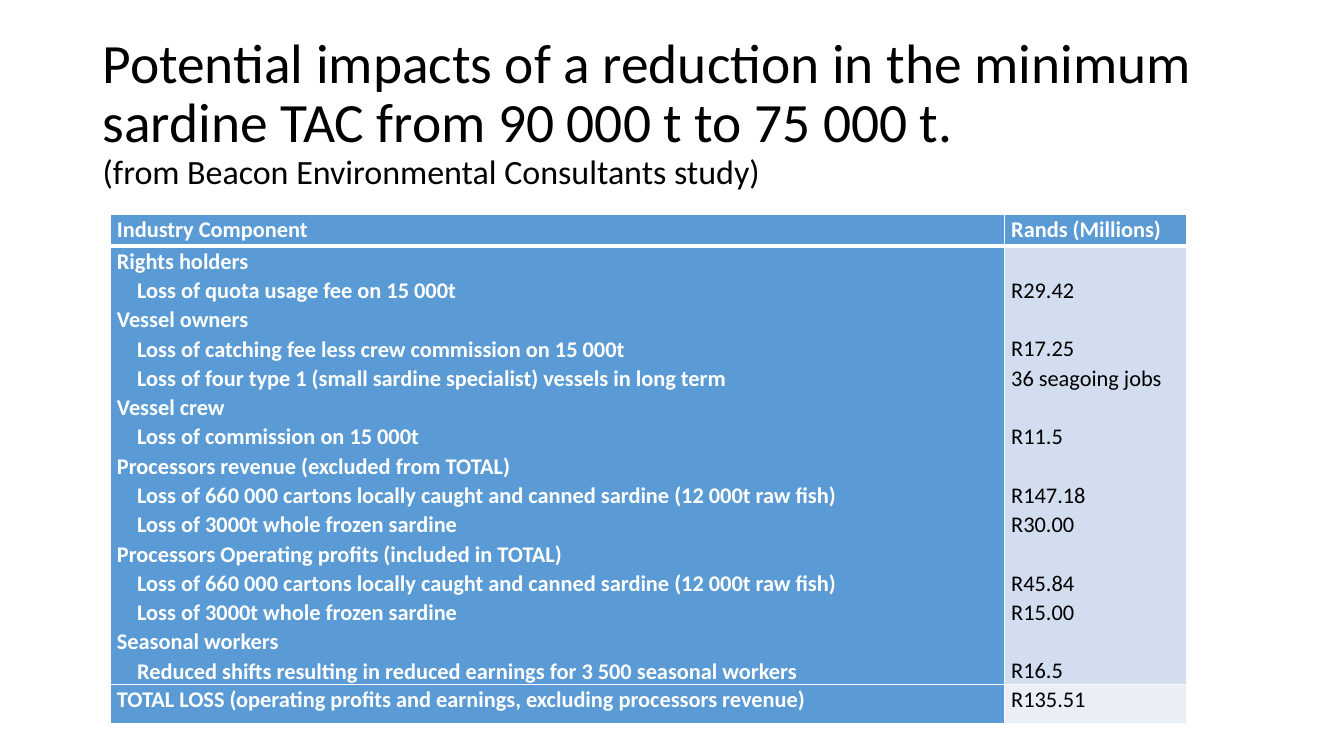
from lxml.etree import SubElement
from pptx import Presentation
from pptx.dml.color import RGBColor
from pptx.enum.text import MSO_ANCHOR, PP_ALIGN
from pptx.oxml.ns import qn
from pptx.util import Inches, Pt

TITLE = "Potential impacts of a reduction in the minimum sardine TAC from 90 000 t to 75 000 t."
SUBTITLE = "(from Beacon Environmental Consultants study)"
HEADER = ("Industry Component", "Rands (Millions)")
LOSSES = [
    ("Rights holders", [("Loss of quota usage fee on 15 000t", "R29.42")]),
    ("Vessel owners", [
        ("Loss of catching fee less crew commission on 15 000t", "R17.25"),
        ("Loss of four type 1 (small sardine specialist) vessels in long term", "36 seagoing jobs"),
    ]),
    ("Vessel crew", [("Loss of commission on 15 000t", "R11.5")]),
    ("Processors revenue (excluded from TOTAL)", [
        ("Loss of 660 000 cartons locally caught and canned sardine (12 000t raw fish)", "R147.18"),
        ("Loss of 3000t whole frozen sardine", "R30.00"),
    ]),
    ("Processors Operating profits (included in TOTAL)", [
        ("Loss of 660 000 cartons locally caught and canned sardine (12 000t raw fish)", "R45.84"),
        ("Loss of 3000t whole frozen sardine", "R15.00"),
    ]),
    ("Seasonal workers", [
        ("Reduced shifts resulting in reduced earnings for 3 500 seasonal workers", "R16.5"),
    ]),
]
TOTAL = ("TOTAL LOSS (operating profits and earnings, excluding processors revenue)", "R135.51")

FONT, BLACK, WHITE = "Calibri", "000000", "FFFFFF"
BLUE, PALE, PALEST = "5B9BD5", "D2DEEF", "EAEFF7"
TEXT_SIZE, LINE_SPACING = 16, 1.07
LINE_PITCH = Pt(20.9)
DETAIL_INDENT = Inches(0.2)
COLUMNS = (8.87, 1.81)
ROWS = (0.31, 4.35, 0.39)


def color(value):
    return RGBColor.from_string(value)


def add_run(paragraph, text, size, ink, bold=False):
    run = paragraph.add_run()
    run.text = text
    run.font.name, run.font.size, run.font.bold = FONT, Pt(size), bold
    run.font.color.rgb = color(ink)


def add_border(properties, position, side, width):
    line = SubElement(properties, qn(f"a:{side}"), w=str(Pt(width)))
    fill = SubElement(line, qn("a:solidFill"))
    SubElement(fill, qn("a:srgbClr"), val=WHITE)
    properties.insert(position, line)


def fill_cell(cell, lines, background, ink, bold, top_width, bottom_width):
    cell.margin_left = cell.margin_right = Inches(0.07)
    cell.margin_bottom = 0
    cell.margin_top = lines[0][2]
    cell.fill.solid()
    cell.fill.fore_color.rgb = color(background)
    borders = (("lnL", 1), ("lnR", 1), ("lnT", top_width), ("lnB", bottom_width))
    for position, (side, width) in enumerate(borders):
        add_border(cell._tc.get_or_add_tcPr(), position, side, width)
    for index, (text, indent, gap) in enumerate(lines):
        paragraph = cell.text_frame.add_paragraph() if index else cell.text_frame.paragraphs[0]
        paragraph.alignment = PP_ALIGN.JUSTIFY
        paragraph.line_spacing = LINE_SPACING
        if index and gap:
            paragraph.space_before = gap
        if indent:
            paragraph._p.get_or_add_pPr().set("marL", str(indent))
        add_run(paragraph, text, TEXT_SIZE, ink, bold)


def add_title(slide):
    box = slide.shapes.add_textbox(Inches(0.92), Inches(0.4), Inches(11.5), Inches(1.45))
    frame = box.text_frame
    frame.word_wrap = True
    frame.vertical_anchor = MSO_ANCHOR.MIDDLE
    paragraph = frame.paragraphs[0]
    paragraph.line_spacing = 0.9
    add_run(paragraph, TITLE, 39.6, BLACK)
    paragraph.add_line_break()
    add_run(paragraph, SUBTITLE, 24.3, BLACK)


def add_losses(slide):
    components, amounts = [], []
    for group, details in LOSSES:
        components.append((group, 0, 0))
        for index, (detail, amount) in enumerate(details):
            components.append((detail, DETAIL_INDENT, 0))
            amounts.append((amount, 0, 0 if index else LINE_PITCH))
    header, total = ([[(text, 0, 0)] for text in pair] for pair in (HEADER, TOTAL))
    body = [
        (header, BLUE, WHITE, True, 1, 3),
        ((components, amounts), PALE, BLACK, False, 3, 1),
        (total, PALEST, BLACK, False, 1, 1),
    ]
    table = slide.shapes.add_table(
        len(ROWS), len(COLUMNS), Inches(1.09), Inches(2.13),
        Inches(sum(COLUMNS)), Inches(sum(ROWS))).table
    table.first_row = table.horz_banding = False
    for column, width in zip(table.columns, COLUMNS):
        column.width = Inches(width)
    for row, height, (pair, background, ink, bold, above, below) in zip(table.rows, ROWS, body):
        row.height = Inches(height)
        fill_cell(row.cells[0], pair[0], BLUE, WHITE, True, above, below)
        fill_cell(row.cells[1], pair[1], background, ink, bold, above, below)


def main():
    deck = Presentation()
    deck.slide_width, deck.slide_height = Inches(13.33), Inches(7.5)
    slide = deck.slides.add_slide(deck.slide_layouts[6])
    add_title(slide)
    add_losses(slide)
    deck.save("out.pptx")


if __name__ == "__main__":
    main()
